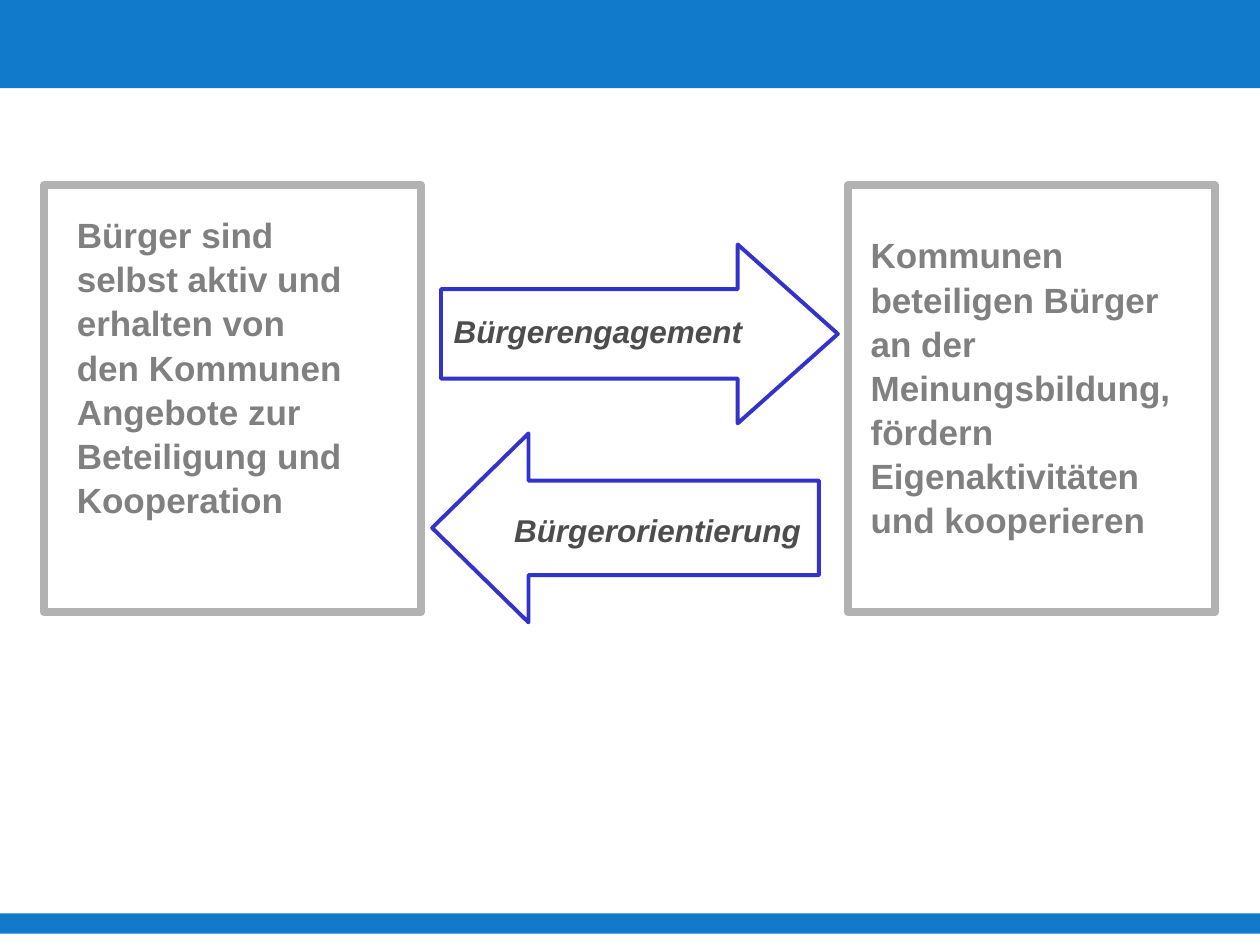
from dataclasses import dataclass

from pptx import Presentation
from pptx.dml.color import RGBColor
from pptx.enum.shapes import MSO_SHAPE as Preset
from pptx.enum.text import MSO_ANCHOR as Anchor, PP_ALIGN as Align
from pptx.util import Inches, Pt

COLUMNS, ROWS = 100, 75
COLORS = {
    "band": "117ACB",
    "arrow": "3333CC",
    "frame": "B2B2B2",
    "statement": "808080",
    "label": "4D4D4D",
}


@dataclass(frozen=True)
class Area:
    column: float
    row: float
    columns: float
    rows: float


@dataclass(frozen=True)
class Outline:
    preset: Preset
    area: Area
    color: str
    weight: float
    adjustments: tuple[float, ...] = ()


@dataclass(frozen=True)
class Caption:
    text: str
    area: Area
    size: int
    color: str
    italic: bool = False


BANDS = [Area(0, 0, COLUMNS, 7), Area(0, 72.5, COLUMNS, 1.6)]

CAPTIONS = [
    Caption(
        "Bürger sind selbst aktiv und erhalten von den Kommunen "
        "Angebote zur Beteiligung und Kooperation",
        Area(6.1, 16.8, 21.7, 29), 20, "statement",
    ),
    Caption(
        "Kommunen beteiligen Bürger an der Meinungsbildung, "
        "fördern Eigenaktivitäten und kooperieren",
        Area(69.1, 18.4, 24, 29), 20, "statement",
    ),
    Caption("Bürgerengagement", Area(36, 24.6, 28.7, 3), 18, "label", True),
    Caption("Bürgerorientierung", Area(40.8, 40.4, 23.2, 3), 18, "label", True),
]

OUTLINES = [
    Outline(Preset.RIGHT_ARROW, Area(35, 19.4, 31.5, 14.2), "arrow", 2.25, (0.5, 0.56)),
    Outline(Preset.LEFT_ARROW, Area(34.3, 34.4, 30.7, 15), "arrow", 2.25, (0.5, 0.51)),
    Outline(Preset.RECTANGLE, Area(67.3, 14.7, 29.1, 33.9), "frame", 4.5),
    Outline(Preset.RECTANGLE, Area(3.5, 14.7, 29.9, 33.9), "frame", 4.5),
]


def color_of(name: str) -> RGBColor:
    return RGBColor.from_string(COLORS[name])


def place(deck, area: Area) -> tuple[int, int, int, int]:
    cell_width = deck.slide_width / COLUMNS
    cell_height = deck.slide_height / ROWS
    return (
        round(area.column * cell_width),
        round(area.row * cell_height),
        round(area.columns * cell_width),
        round(area.rows * cell_height),
    )


def draw_band(deck, page, area: Area) -> None:
    band = page.shapes.add_shape(Preset.RECTANGLE, *place(deck, area))
    band.shadow.inherit = False
    band.fill.solid()
    band.fill.fore_color.rgb = color_of("band")
    band.line.fill.background()


def draw_outline(deck, page, outline: Outline) -> None:
    shape = page.shapes.add_shape(outline.preset, *place(deck, outline.area))
    shape.shadow.inherit = False
    shape.fill.background()
    shape.line.color.rgb = color_of(outline.color)
    shape.line.width = Pt(outline.weight)
    for index, value in enumerate(outline.adjustments):
        shape.adjustments[index] = value


def draw_caption(deck, page, caption: Caption) -> None:
    box = page.shapes.add_textbox(*place(deck, caption.area))
    frame = box.text_frame
    frame.word_wrap = True
    frame.vertical_anchor = Anchor.TOP
    frame.margin_left = frame.margin_right = 0
    frame.margin_top = frame.margin_bottom = 0
    para = frame.paragraphs[0]
    para.alignment = Align.LEFT
    para.line_spacing = 1.05
    span = para.add_run()
    span.text = caption.text
    span.font.name = "Arial"
    span.font.size = Pt(caption.size)
    span.font.bold = True
    span.font.italic = caption.italic
    span.font.color.rgb = color_of(caption.color)


def main() -> None:
    deck = Presentation()
    deck.slide_width, deck.slide_height = Inches(10), Inches(7.5)
    page = deck.slides.add_slide(deck.slide_layouts[6])
    for area in BANDS:
        draw_band(deck, page, area)
    for caption in CAPTIONS:
        draw_caption(deck, page, caption)
    for outline in OUTLINES:
        draw_outline(deck, page, outline)
    deck.save("out.pptx")


if __name__ == "__main__":
    main()
